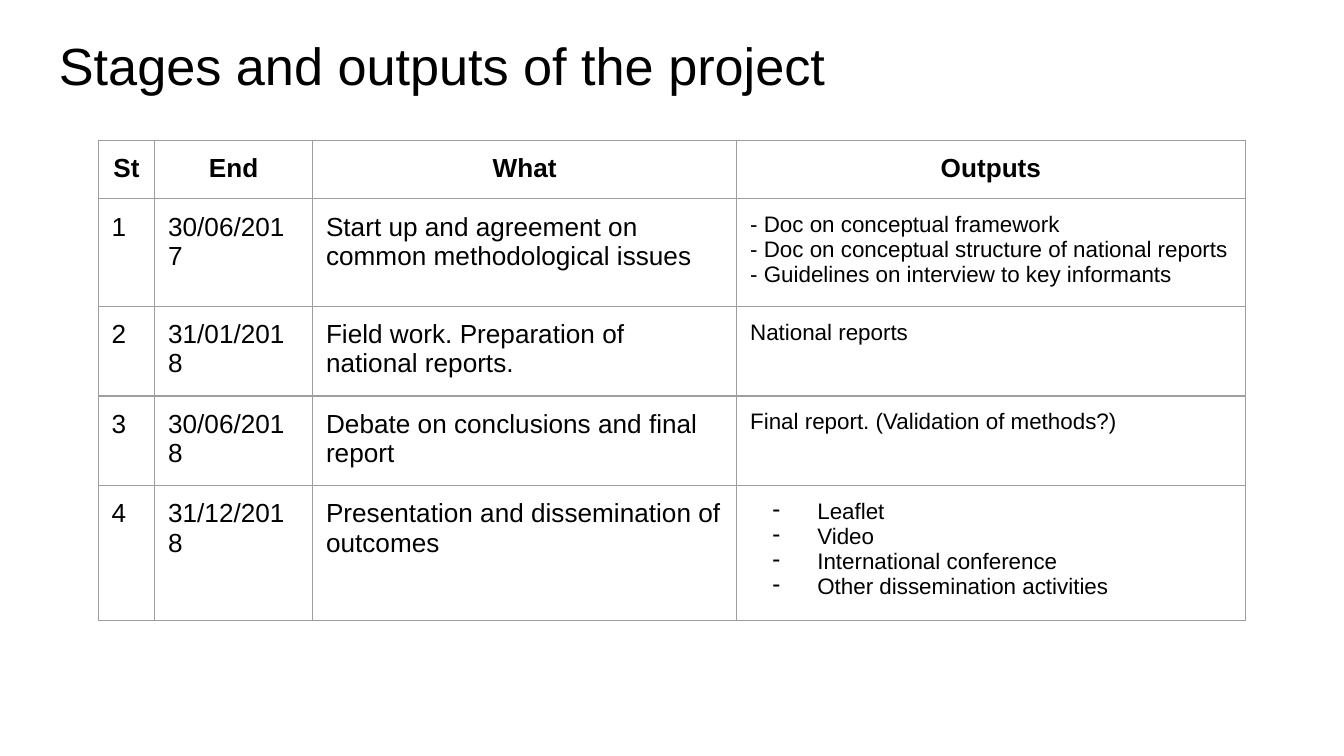
"""Build a slide with a table of project stages and outputs."""
import dataclasses

import lxml.etree
import pptx
import pptx.dml.color
import pptx.enum.text
import pptx.oxml.ns
import pptx.util

Pt = pptx.util.Pt
qn = pptx.oxml.ns.qn
FONT = "Arial"
BLACK = "000000"
BORDER = "9E9E9E"
INSET = 7.2
HEADERS = ("St", "End", "What", "Outputs")
COLUMN_WIDTHS = (30.3, 84.6, 227.2, 272.4)
HEADER_HEIGHT = 30.3


@dataclasses.dataclass
class Stage:
    end: str
    what: str
    outputs: tuple[str, ...]
    height: float
    bulleted: bool = False


STAGES = (
    Stage("30/06/2017", "Start up and agreement on common methodological issues",
          ("- Doc on conceptual framework",
           "- Doc on conceptual structure of national reports",
           "- Guidelines on interview to key informants"), 54.7),
    Stage("31/01/2018", "Field work. Preparation of national reports.",
          ("National reports",), 45.8),
    Stage("30/06/2018", "Debate on conclusions and final report",
          ("Final report. (Validation of methods?)",), 45.8),
    Stage("31/12/2018", "Presentation and dissemination of outcomes",
          ("Leaflet", "Video", "International conference",
           "Other dissemination activities"), 68.4, bulleted=True),
)


def color(value: str) -> pptx.dml.color.RGBColor:
    return pptx.dml.color.RGBColor.from_string(value)


def add_bullet(paragraph) -> None:
    properties = paragraph._p.get_or_add_pPr()
    properties.set("marL", str(Pt(36)))
    properties.set("indent", str(-Pt(24)))
    lxml.etree.SubElement(properties, qn("a:buChar"), char="-")


def write_lines(text_frame, lines: tuple[str, ...], size: float, bold: bool = False,
                centered: bool = False, bulleted: bool = False) -> None:
    text_frame.word_wrap = True
    text_frame.text = "\n".join(lines)
    alignment = pptx.enum.text.PP_ALIGN
    for paragraph in text_frame.paragraphs:
        if bulleted:
            add_bullet(paragraph)
        paragraph.alignment = alignment.CENTER if centered else alignment.LEFT
        paragraph.font.name = FONT
        paragraph.font.size = Pt(size)
        paragraph.font.bold = bold
        paragraph.font.color.rgb = color(BLACK)


def set_insets(target) -> None:
    target.margin_left = target.margin_right = Pt(INSET)
    target.margin_top = target.margin_bottom = Pt(INSET)


def style_cell(cell) -> None:
    set_insets(cell)
    cell.vertical_anchor = pptx.enum.text.MSO_ANCHOR.TOP
    properties = cell._tc.get_or_add_tcPr()
    for side in ("lnL", "lnR", "lnT", "lnB"):
        line = lxml.etree.SubElement(properties, qn(f"a:{side}"), w=str(Pt(0.75)))
        fill = lxml.etree.SubElement(line, qn("a:solidFill"))
        lxml.etree.SubElement(fill, qn("a:srgbClr"), val=BORDER)
    cell.fill.background()


def add_title(slide, text: str) -> None:
    shape = slide.shapes.add_textbox(Pt(24.5), Pt(10.8), Pt(671), Pt(45.4))
    set_insets(shape.text_frame)
    write_lines(shape.text_frame, (text,), 28)


def add_stage_table(slide) -> None:
    heights = (HEADER_HEIGHT, *(stage.height for stage in STAGES))
    shape = slide.shapes.add_table(len(heights), len(COLUMN_WIDTHS), Pt(52.6), Pt(75.3),
                                   Pt(sum(COLUMN_WIDTHS)), Pt(sum(heights)))
    table = shape.table
    table.first_row = table.horz_banding = False
    for column, width in zip(table.columns, COLUMN_WIDTHS):
        column.width = Pt(width)
    for row, height in zip(table.rows, heights):
        row.height = Pt(height)
    for cell in table.iter_cells():
        style_cell(cell)
    for column, header in enumerate(HEADERS):
        write_lines(table.cell(0, column).text_frame, (header,), 14, bold=True, centered=True)
    for number, stage in enumerate(STAGES, start=1):
        for column, text in enumerate((str(number), stage.end, stage.what)):
            write_lines(table.cell(number, column).text_frame, (text,), 14)
        write_lines(table.cell(number, 3).text_frame, stage.outputs, 12,
                    bulleted=stage.bulleted)


def main() -> None:
    presentation = pptx.Presentation()
    presentation.slide_width = Pt(720)
    presentation.slide_height = Pt(405)
    slide = presentation.slides.add_slide(presentation.slide_layouts[6])
    add_title(slide, "Stages and outputs of the project")
    add_stage_table(slide)
    presentation.save("out.pptx")


if __name__ == "__main__":
    main()
